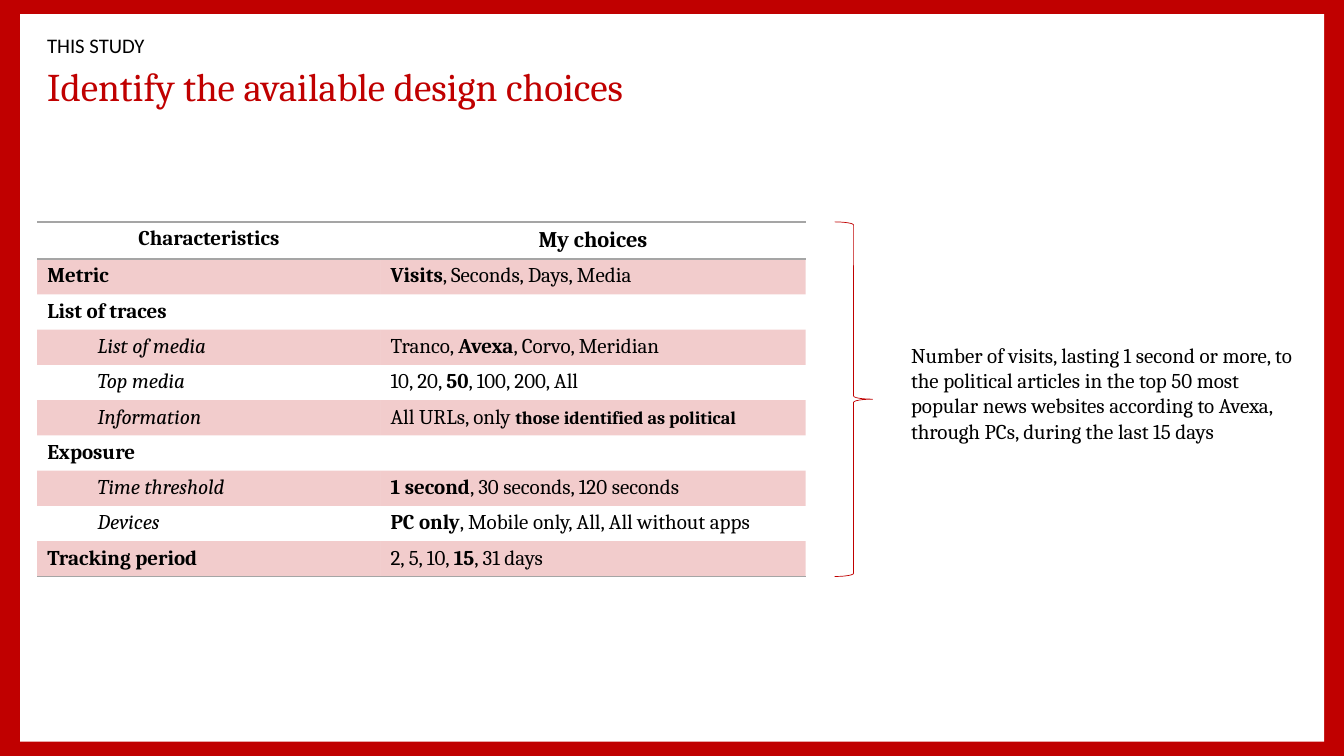
from lxml.etree import SubElement
from pptx import Presentation
from pptx.dml.color import RGBColor
from pptx.enum.shapes import MSO_SHAPE
from pptx.enum.text import MSO_ANCHOR, MSO_AUTO_SIZE, PP_ALIGN
from pptx.oxml.ns import qn
from pptx.util import Pt

RED = RGBColor(0xC0, 0x00, 0x00)
WHITE = RGBColor(0xFF, 0xFF, 0xFF)
BLACK = RGBColor(0x00, 0x00, 0x00)
GREY = RGBColor(0xA5, 0xA5, 0xA5)
NO_STYLE = "{2D5ABB26-0587-4C30-8999-92F81FD0307C}"


def add_run(paragraph, text, size=15, name="Cambria", color=BLACK, bold=False, italic=False):
    run = paragraph.add_run()
    run.text = text
    font = run.font
    font.size, font.name, font.bold, font.italic = Pt(size), name, bold, italic
    font.color.rgb = color


def add_border(cell, side):
    line = SubElement(cell._tc.get_or_add_tcPr(), qn("a:" + side), w=str(Pt(1)))
    fill = SubElement(line, qn("a:solidFill"))
    SubElement(fill, qn("a:srgbClr"), val=str(GREY))


presentation = Presentation()
presentation.slide_width, presentation.slide_height = Pt(960), Pt(540)
slide = presentation.slides.add_slide(presentation.slide_layouts[6])

# Red frame around a white page
for left, top, width, height, color in (
    (0, 0, 960, 540, RED),
    (14.4, 10, 931.4, 519.8, WHITE),
):
    shape = slide.shapes.add_shape(
        MSO_SHAPE.RECTANGLE, Pt(left), Pt(top), Pt(width), Pt(height))
    shape.shadow.inherit = False
    shape.fill.solid()
    shape.fill.fore_color.rgb = color
    shape.line.fill.background()

# Section label, title and summary
summary = (
    "Number of visits, lasting 1 second or more, to the political articles in the "
    "top 50 most popular news websites according to Avexa, through PCs, during "
    "the last 15 days"
)
for text, left, top, width, height, size, name, color, anchor, spacing in (
    ("THIS STUDY", 26.6, 23, 812, 22.3, 14.8, "Calibri", BLACK, MSO_ANCHOR.MIDDLE, 0.8),
    ("Identify the available design choices", 26.6, 46.8, 840, 33.8, 28, "Cambria", RED,
     MSO_ANCHOR.MIDDLE, 0.9),
    (summary, 643.7, 241.2, 290.2, 97.9, 15, "Cambria", BLACK, MSO_ANCHOR.TOP, 1.0),
):
    box = slide.shapes.add_textbox(Pt(left), Pt(top), Pt(width), Pt(height))
    frame = box.text_frame
    frame.word_wrap = True
    frame.auto_size = MSO_AUTO_SIZE.NONE
    frame.vertical_anchor = anchor
    paragraph = frame.paragraphs[0]
    paragraph.line_spacing = spacing
    add_run(paragraph, text, size, name, color)

# Design choices: label, is a sub-item, choices as (text, bold, size)
rows = [
    ("Metric", False, [("Visits", True, 15), (", Seconds, Days, Media", False, 15)]),
    ("List of traces", False, []),
    ("List of media", True,
     [("Tranco, ", False, 15), ("Avexa", True, 15), (", Corvo, Meridian", False, 15)]),
    ("Top media", True,
     [("10, 20, ", False, 15), ("50", True, 15), (", 100, 200, All", False, 15)]),
    ("Information", True,
     [("All URLs, only ", False, 15), ("those identified as political", True, 13)]),
    ("Exposure", False, []),
    ("Time threshold", True,
     [("1 second", True, 15), (", 30 seconds, 120 seconds", False, 15)]),
    ("Devices", True,
     [("PC only", True, 15), (", Mobile only, All, All without apps", False, 15)]),
    ("Tracking period", False,
     [("2, 5, 10, ", False, 15), ("15", True, 15), (", 31 days", False, 15)]),
]
table = slide.shapes.add_table(
    len(rows) + 1, 2, Pt(26.6), Pt(158.5), Pt(548.8), Pt(253.3)).table
table.first_row = table.horz_banding = False
table._tbl.tblPr.find(qn("a:tableStyleId")).text = NO_STYLE
table.columns[0].width, table.columns[1].width = Pt(245.2), Pt(303.6)
for table_row in table.rows:
    table_row.height = Pt(25.2)
table.rows[0].height = Pt(26.5)

# Header row
for cell, text, size in zip(table.rows[0].cells, ("Characteristics", "My choices"), (15, 16)):
    paragraph = cell.text_frame.paragraphs[0]
    paragraph.alignment = PP_ALIGN.CENTER
    add_run(paragraph, text, size, bold=True)
    add_border(cell, "lnT")
    add_border(cell, "lnB")

# Body rows, every other one tinted
for index, (label, is_sub_item, choices) in enumerate(rows):
    label_cell, choice_cell = table.rows[index + 1].cells
    paragraph = label_cell.text_frame.paragraphs[0]
    if is_sub_item:
        paragraph.level = 1
        paragraph._p.get_or_add_pPr().set("marL", str(Pt(36)))
    add_run(paragraph, label, bold=not is_sub_item, italic=is_sub_item)

    paragraph = choice_cell.text_frame.paragraphs[0]
    for text, bold, size in choices:
        add_run(paragraph, text, size, bold=bold)
    if not choices:
        end = SubElement(paragraph._p, qn("a:endParaRPr"), sz="1500")
        SubElement(end, qn("a:latin"), typeface="Cambria")

    for cell in (label_cell, choice_cell):
        if index == len(rows) - 1:
            add_border(cell, "lnB")
        if index % 2 == 0:
            cell.fill.solid()
            cell.fill.fore_color.rgb = RED
            tint = cell._tc.tcPr.find(qn("a:solidFill")).find(qn("a:srgbClr"))
            SubElement(tint, qn("a:alpha"), val="20000")
        else:
            cell.fill.background()

# Brace from the table to the summary
brace = slide.shapes.add_shape(
    MSO_SHAPE.RIGHT_BRACE, Pt(596.2), Pt(158.5), Pt(27), Pt(253.3))
brace.shadow.inherit = False
brace.fill.background()
brace.line.color.rgb = RED
brace.line.width = Pt(0.5)

presentation.save("out.pptx")
